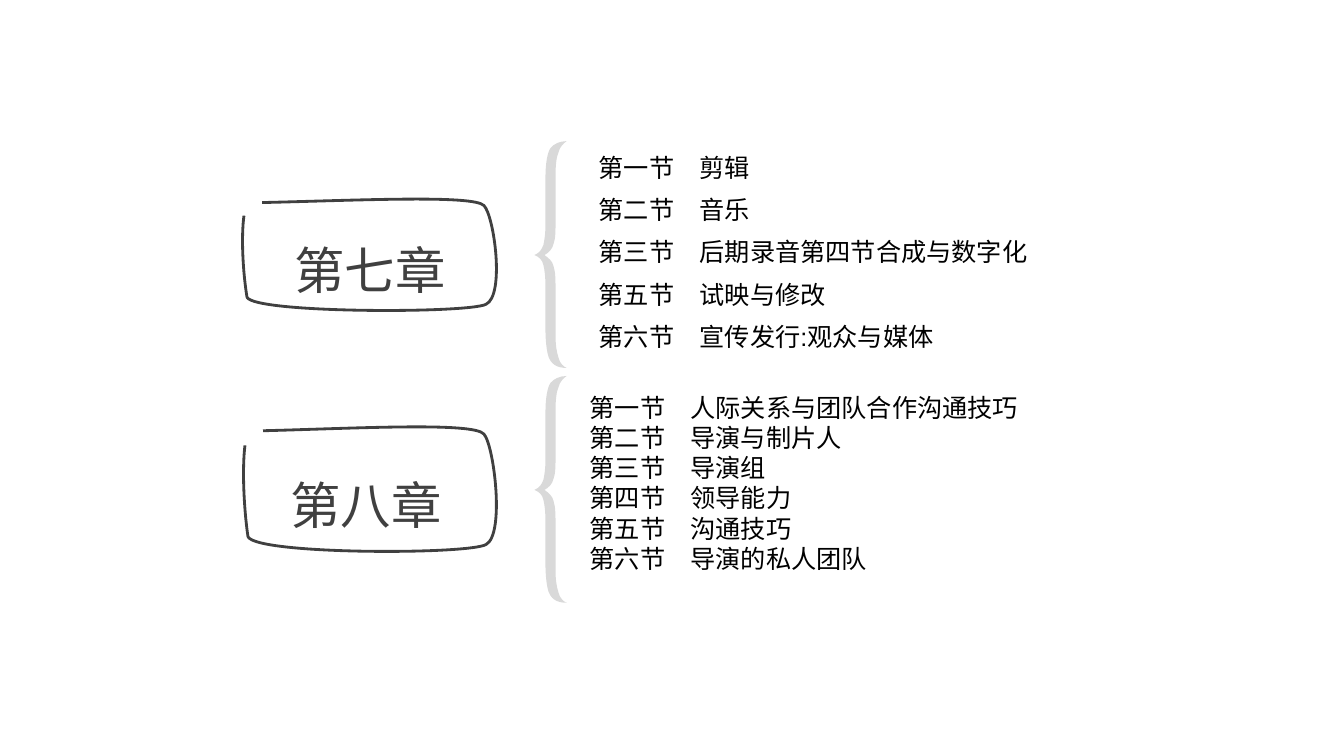
"""Build a slide that outlines two chapters with braces and section lists."""
import lxml.etree
import pptx
import pptx.dml.color
import pptx.enum.text
import pptx.oxml.ns
import pptx.util

CELL = pptx.util.Inches(1)
COLUMNS, ROWS = 13.33, 7.5
INK, BRACE_GREY, BLACK = "404040", "D9D9D9", "000000"

FRAME_SIZE = (2.52, 1.1)
FRAME_START = (0.2, 0.03)
FRAME_CURVES = [
    [(1.1, 0.01), (2.3, -0.05), (2.4, 0.06)],
    [(2.5, 0.16), (2.61, 0.95), (2.42, 1.04)],
    [(2.23, 1.13), (0.13, 1.13), (0.05, 0.97)],
    [(0.01, 0.73), (-0.01, 0.37), (0.02, 0.16)],
]
BRACE_SIZE = (0.32, 2.25)
BRACE_START = (0.21, 0.33)
BRACE_CURVES = [
    [(0.21, 0.24), (0.22, 0.15), (0.24, 0.11)],
    [(0.25, 0.06), (0.29, 0.02), (0.32, 0)],
    [(0.25, 0), (0.19, 0.03), (0.16, 0.07)],
    [(0.13, 0.11), (0.11, 0.22), (0.11, 0.36)],
    [(0.11, 0.83)] * 3,
    [(0.11, 0.92), (0.1, 0.98), (0.09, 1.03)],
    [(0.07, 1.08), (0.05, 1.11), (0, 1.13)],
    [(0.05, 1.15), (0.08, 1.18), (0.09, 1.23)],
    [(0.1, 1.27), (0.11, 1.34), (0.11, 1.44)],
    [(0.11, 1.86)] * 3,
    [(0.11, 1.97), (0.12, 2.05), (0.13, 2.1)],
    [(0.14, 2.16), (0.17, 2.2), (0.2, 2.22)],
    [(0.23, 2.24), (0.27, 2.25), (0.32, 2.25)],
    [(0.29, 2.24), (0.25, 2.2), (0.24, 2.15)],
    [(0.22, 2.09), (0.21, 2.02), (0.21, 1.93)],
    [(0.21, 1.49)] * 3,
    [(0.21, 1.38), (0.21, 1.3), (0.19, 1.24)],
    [(0.18, 1.19), (0.14, 1.16), (0.1, 1.13)],
    [(0.14, 1.11), (0.18, 1.07), (0.19, 1.02)],
    [(0.21, 0.97), (0.21, 0.89), (0.21, 0.79)],
]
SECTIONS_SEVEN = [
    "第一节\t剪辑",
    "第二节\t音乐",
    "第三节\t后期录音第四节合成与数字化",
    "第五节\t试映与修改",
    "第六节\t宣传发行:观众与媒体",
]
SECTIONS_EIGHT = [
    "第一节\t人际关系与团队合作沟通技巧",
    "第二节\t导演与制片人",
    "第三节\t导演组",
    "第四节\t领导能力",
    "第五节\t沟通技巧",
    "第六节\t导演的私人团队",
]


def cells(count):
    """Turn a number of grid cells into a length."""
    return round(count * CELL)


def color(value):
    """Turn a hex string into a colour."""
    return pptx.dml.color.RGBColor.from_string(value)


def add_step(route, kind, points=()):
    """Append one drawing step with its points to a route."""
    step = lxml.etree.SubElement(route, pptx.oxml.ns.qn(f"a:{kind}"))
    for x, y in points:
        lxml.etree.SubElement(step, pptx.oxml.ns.qn("a:pt"),
                              x=str(cells(x)), y=str(cells(y)))


def add_outline(page, place, size, start, curves, closed):
    """Draw a chain of curves, given on its own size, fitted to a place."""
    left, top, width, height = map(cells, place)
    builder = page.shapes.build_freeform(left, top)
    builder.add_line_segments([(left + width, top + height)], close=False)
    outline = builder.convert_to_shape()
    outline.shadow.inherit = False
    route = next(outline.element.iter(pptx.oxml.ns.qn("a:path")))
    for step in list(route):
        route.remove(step)
    for side, length in zip("wh", size):
        route.set(side, str(cells(length)))
    add_step(route, "moveTo", [start])
    for curve in curves:
        add_step(route, "cubicBezTo", curve)
    if closed:
        add_step(route, "lnTo", [start])
        add_step(route, "close")
    return outline


def add_frame(page, place):
    """Draw the hand-drawn frame of a chapter."""
    frame = add_outline(page, place, FRAME_SIZE, FRAME_START, FRAME_CURVES, False)
    frame.fill.background()
    frame.line.color.rgb = color(INK)
    frame.line.width = pptx.util.Pt(2)


def add_brace(page, top):
    """Draw the brace in front of a section list."""
    brace = add_outline(page, (5.3, top, *BRACE_SIZE), BRACE_SIZE,
                        BRACE_START, BRACE_CURVES, True)
    brace.fill.solid()
    brace.fill.fore_color.rgb = color(BRACE_GREY)
    brace.line.fill.background()


def add_text(page, place, lines, size, ink, spacing=None):
    """Add a text box with one paragraph for each line."""
    box = page.shapes.add_textbox(*map(cells, place))
    frame = box.text_frame
    frame.word_wrap = True
    frame.auto_size = pptx.enum.text.MSO_AUTO_SIZE.SHAPE_TO_FIT_TEXT
    frame.text = "\n".join(lines)
    for para in frame.paragraphs:
        para.line_spacing = spacing
        for span in para.runs:
            span.font.name = "Arial"
            span.font.size = pptx.util.Pt(size)
            span.font.color.rgb = color(ink)


def main():
    """Build and save the deck."""
    deck = pptx.Presentation()
    deck.slide_width, deck.slide_height = cells(COLUMNS), cells(ROWS)
    page = deck.slides.add_slide(deck.slide_layouts[6])
    add_frame(page, (2.4, 1.98, 2.52, 1.1))
    add_frame(page, (2.41, 4.24, 2.51, 1.23))
    add_text(page, (2.71, 2.02, 2.14, 1.01), [" 第七章"], 36, INK, 1.5)
    add_text(page, (2.67, 4.35, 2.21, 1.01), [" 第八章"], 36, INK, 1.5)
    add_brace(page, 1.4)
    add_brace(page, 3.73)
    add_text(page, (5.84, 1.34, 4.75, 2.22), SECTIONS_SEVEN, 18, BLACK, 1.4)
    add_text(page, (5.75, 3.84, 4.99, 1.92), SECTIONS_EIGHT, 18, BLACK)
    deck.save("out.pptx")


if __name__ == "__main__":
    main()
